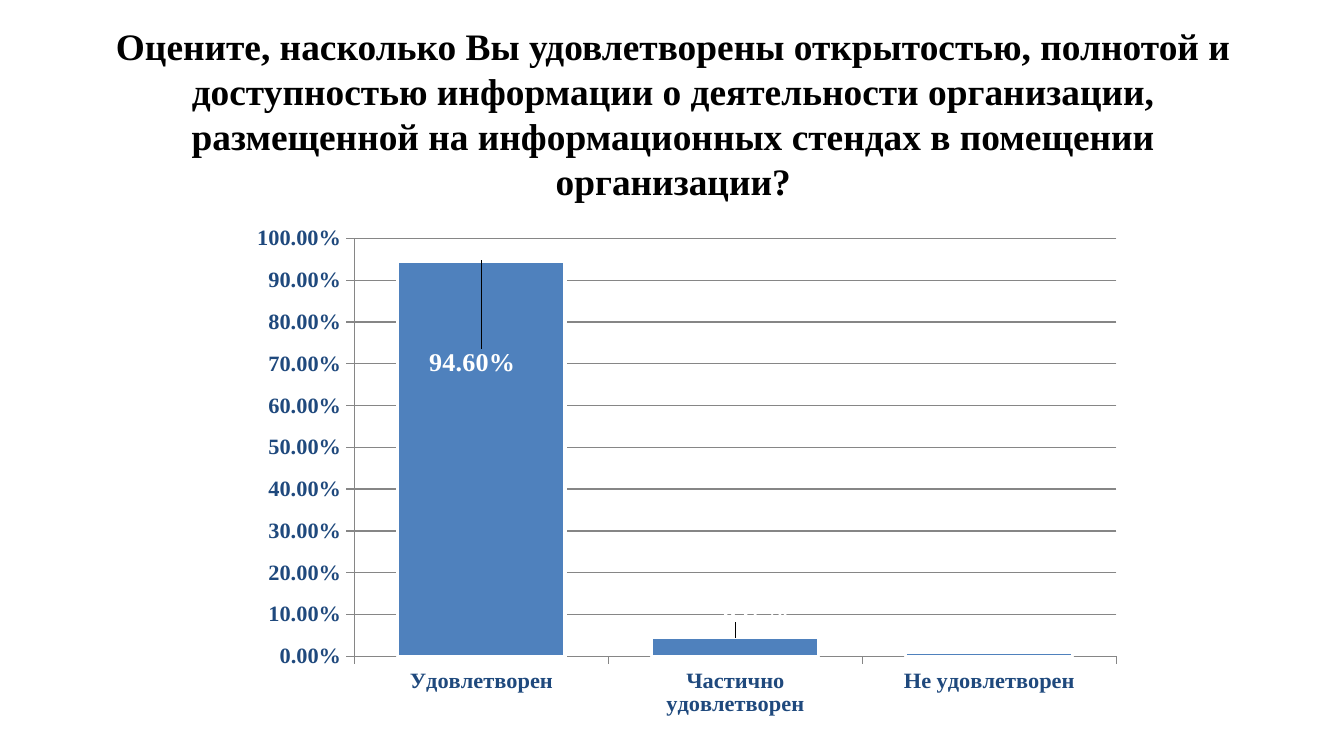
from lxml import etree
from pptx import Presentation
from pptx.chart.data import CategoryChartData
from pptx.dml.color import RGBColor
from pptx.enum.chart import XL_CHART_TYPE as ChartType, XL_LABEL_POSITION as LabelPosition, XL_TICK_MARK as TickMark
from pptx.enum.text import MSO_ANCHOR as Anchor, MSO_AUTO_SIZE as AutoSize, PP_ALIGN as Align
from pptx.oxml import parse_xml
from pptx.oxml.ns import qn
from pptx.util import Inches, Pt

TITLE = (
    "Оцените, насколько Вы удовлетворены открытостью, полнотой и доступностью "
    "информации о деятельности организации, размещенной на информационных стендах "
    "в помещении организации?"
)
ANSWERS = {"Удовлетворен": 0.946, "Частично удовлетворен": 0.0447, "Не удовлетворен": 0.0093}
LABEL_SHIFTS = [(-0.01, 0.25), (0.02, -0.02), (0, 0)]
PLOT_AREA = {"x": 0.13, "y": 0.04, "w": 0.85, "h": 0.86}
COLORS = {"title": "000000", "axis": "1F497D", "bar": "4F81BD", "light": "FFFFFF", "grid": "868686"}
FONT = "Times New Roman"
PERCENT = "0.00%"
NO_LEADER_LINES = (
    '<c:extLst xmlns:c="http://schemas.openxmlformats.org/drawingml/2006/chart">'
    '<c:ext uri="{CE6537A1-D6FC-4f65-9D91-7224C49458BB}" '
    'xmlns:c15="http://schemas.microsoft.com/office/drawing/2012/chart">'
    '<c15:showLeaderLines val="0"/></c:ext></c:extLst>'
)


def style_font(font, size, color):
    font.name = FONT
    font.size = Pt(size)
    font.bold = True
    font.color.rgb = RGBColor.from_string(COLORS[color])


def style_line(line, color, width):
    line.color.rgb = RGBColor.from_string(COLORS[color])
    line.width = Pt(width)


def set_layout(parent, position, settings):
    old_layout = parent.find(qn("c:layout"))
    if old_layout is not None:
        parent.remove(old_layout)
    layout = etree.Element(qn("c:layout"))
    manual = etree.SubElement(layout, qn("c:manualLayout"))
    for name, value in settings.items():
        etree.SubElement(manual, qn(f"c:{name}")).set("val", str(value))
    parent.insert(position, layout)


def add_title(page):
    title = page.shapes.title
    title.left, title.top, title.width, title.height = map(Inches, (0.51, 0.37, 9, 0.94))
    frame = title.text_frame
    frame.text = TITLE
    frame.word_wrap = True
    frame.auto_size = AutoSize.NONE
    frame.vertical_anchor = Anchor.MIDDLE
    para = frame.paragraphs[0]
    para.alignment = Align.CENTER
    style_font(para.font, 20, "title")


def add_answer_chart(page):
    data = CategoryChartData(number_format=PERCENT)
    data.categories = list(ANSWERS)
    data.add_series("Series 1", list(ANSWERS.values()))
    place = map(Inches, (1.77, 1.63, 6.67, 3.7))
    chart = page.shapes.add_chart(ChartType.COLUMN_CLUSTERED, *place, data).chart
    chart.has_legend = False
    chart.has_title = False
    chart.font.name = "Calibri"
    chart.font.size = Pt(10)
    inner = {"layoutTarget": "inner", "xMode": "edge", "yMode": "edge"}
    set_layout(chart._chartSpace.find(f".//{qn('c:plotArea')}"), 0, inner | PLOT_AREA)

    for axis in (chart.category_axis, chart.value_axis):
        style_font(axis.tick_labels.font, 12, "axis")
        style_line(axis.format.line, "grid", 0.75)
        axis.major_tick_mark = TickMark.OUTSIDE
        body = axis._element.find(f"{qn('c:txPr')}/{qn('a:bodyPr')}")
        body.set("rot", "-60000000")
        body.set("vert", "horz")
    scale = chart.value_axis
    scale.minimum_scale, scale.maximum_scale, scale.major_unit = 0, 1, 0.1
    scale.tick_labels.number_format = PERCENT
    scale.tick_labels.number_format_is_linked = False
    style_line(scale.major_gridlines.format.line, "grid", 0.75)

    plot = chart.plots[0]
    plot.gap_width = 52
    plot.vary_by_categories = False
    series = plot.series[0]
    series.format.fill.solid()
    series.format.fill.fore_color.rgb = RGBColor.from_string(COLORS["bar"])
    style_line(series.format.line, "light", 1.75)

    labels = series.data_labels
    labels.show_value = True
    labels.number_format = PERCENT
    labels.number_format_is_linked = False
    labels.position = LabelPosition.OUTSIDE_END
    style_font(labels.font, 14, "light")
    for index in range(len(ANSWERS)):
        label = series.points[index].data_label
        label.position = LabelPosition.OUTSIDE_END
        style_font(label.font, 14, "light")
    for label_xml, shift in zip(labels._element.findall(qn("c:dLbl")), LABEL_SHIFTS):
        set_layout(label_xml, 1, dict(zip("xy", shift)))
    labels._element.append(parse_xml(NO_LEADER_LINES))


def main():
    deck = Presentation()
    deck.slide_width = Inches(10)
    deck.slide_height = deck.slide_width * 9 // 16
    page = deck.slides.add_slide(deck.slide_layouts[5])
    add_title(page)
    add_answer_chart(page)
    deck.save("out.pptx")


if __name__ == "__main__":
    main()
